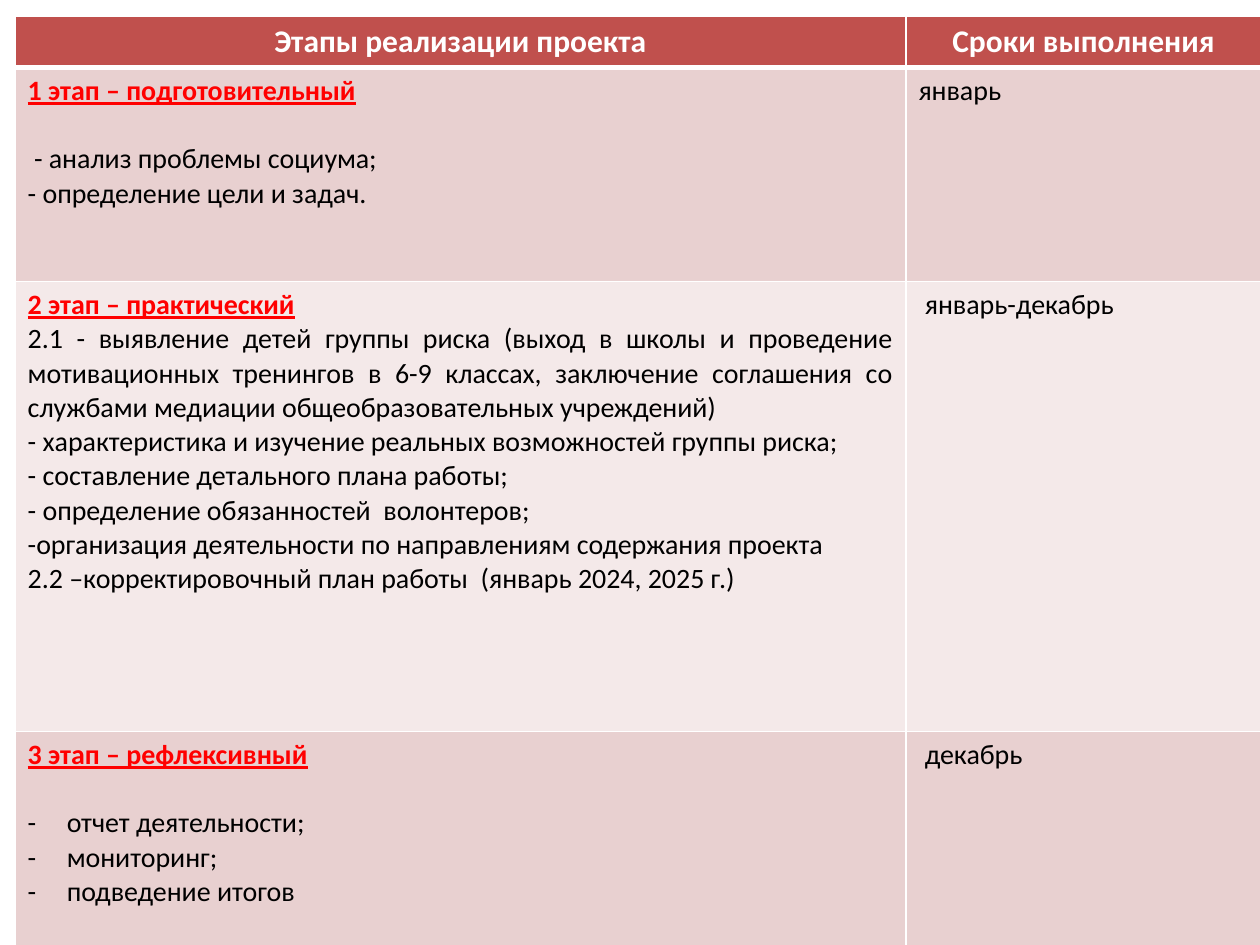
from lxml.etree import SubElement as Sub
from pptx import Presentation
from pptx.dml.color import RGBColor as Rgb
from pptx.enum.text import PP_ALIGN as Al
from pptx.oxml.ns import qn
from pptx.util import Inches, Pt

WHITE, BLACK, RED = "FFFFFF", "000000", "FF0000"
HEAD, DARK, LIGHT = "C0504D", "E8D0D0", "F4E9E9"
COLS = (7.07, 2.82)
ROWS = (0.4, 1.7, 3.57, 1.7)
GAP = 19.5  # one line of 16 pt text

# Each stage: title, gap below it, style of its items, items, dates
STAGES = [
    ("1 этап – подготовительный", GAP, "plain",
     [" - анализ проблемы социума;", "- определение цели и задач."],
     "январь"),
    ("2 этап – практический", 0, "just",
     ["2.1 - выявление детей группы риска (выход в школы и проведение "
      "мотивационных тренингов в 6-9 классах, заключение соглашения со "
      "службами медиации общеобразовательных учреждений)",
      "- характеристика и изучение реальных возможностей группы риска;",
      "- составление детального плана работы;",
      "- определение обязанностей  волонтеров;",
      "-организация деятельности по направлениям содержания проекта",
      "2.2 –корректировочный план работы  (январь 2024, 2025 г.)"],
     " январь-декабрь"),
    ("3 этап – рефлексивный", GAP, "dash",
     ["отчет деятельности;", "мониторинг;", "подведение итогов"],
     " декабрь"),
]


def color(code):
    return Rgb.from_string(code)


def write(par, text, size=16, code=BLACK, bold=False, under=False):
    run = par.add_run()
    run.text = text
    font = run.font
    font.name, font.size = "Calibri", Pt(size)
    font.bold, font.underline = bold, under
    font.color.rgb = color(code)


def dash(par):
    props = par._p.get_or_add_pPr()
    props.set("marL", str(Inches(0.31)))
    props.set("indent", str(-Inches(0.31)))
    Sub(props, qn("a:buFont"), typeface="Calibri")
    Sub(props, qn("a:buChar"), char="-")


def paint(cell, code, top=1, base=1):
    """Fill the cell and give it white borders."""
    cell.fill.solid()
    cell.fill.fore_color.rgb = color(code)
    props = cell._tc.get_or_add_tcPr()
    sides = (("L", 1), ("R", 1), ("T", top), ("B", base))
    for i, (side, width) in enumerate(sides):
        line = Sub(props, qn("a:ln" + side), w=str(Pt(width)))
        fill = Sub(line, qn("a:solidFill"))
        Sub(fill, qn("a:srgbClr"), val=WHITE)
        props.insert(i, line)  # borders come before the fill


def add_stage(cell, title, gap, style, items):
    frame = cell.text_frame
    par = frame.paragraphs[0]
    par.space_after = Pt(gap)
    write(par, title, code=RED, bold=True, under=True)
    for item in items:
        par = frame.add_paragraph()
        if style == "just":
            par.alignment = Al.JUSTIFY
        elif style == "dash":
            dash(par)
        write(par, item)


def add_plan(slide, left, top, width, height):
    """Table of project stages and their dates."""
    table = slide.shapes.add_table(
        len(ROWS), len(COLS), Inches(left), Inches(top),
        Inches(width), Inches(height)).table
    for col, size in zip(table.columns, COLS):
        col.width = Inches(size)
    for row, size in zip(table.rows, ROWS):
        row.height = Inches(size)

    # Header
    titles = ("Этапы реализации проекта", "Сроки выполнения")
    for i, title in enumerate(titles):
        cell = table.cell(0, i)
        paint(cell, HEAD, base=3)
        par = cell.text_frame.paragraphs[0]
        par.alignment = Al.CENTER
        write(par, title, 18, WHITE, bold=True)

    # Stages
    for i, (title, gap, style, items, dates) in enumerate(STAGES, 1):
        stage, term = table.cell(i, 0), table.cell(i, 1)
        for cell in (stage, term):
            paint(cell, DARK if i % 2 else LIGHT, top=3 if i == 1 else 1)
        add_stage(stage, title, gap, style, items)
        write(term.text_frame.paragraphs[0], dates)


def main():
    deck = Presentation()
    deck.slide_width, deck.slide_height = Inches(10), Inches(7.5)
    slide = deck.slides.add_slide(deck.slide_layouts[6])
    add_plan(slide, 0.12, 0.13, sum(COLS), sum(ROWS))
    deck.save("out.pptx")


if __name__ == "__main__":
    main()
